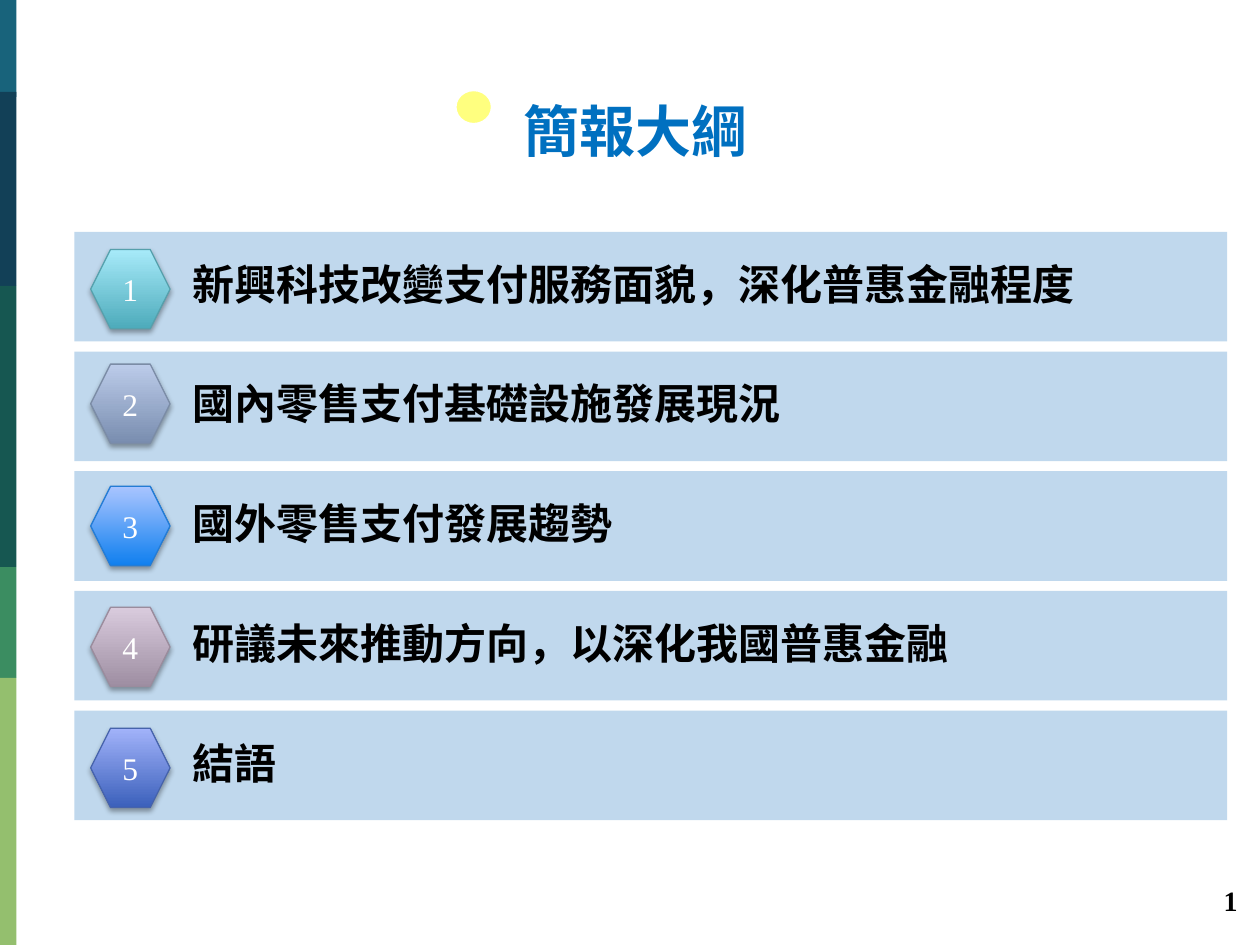
from dataclasses import dataclass

from lxml.etree import SubElement
from pptx import Presentation
from pptx.dml.color import RGBColor
from pptx.enum.shapes import MSO_SHAPE
from pptx.enum.text import MSO_ANCHOR, PP_ALIGN
from pptx.oxml.ns import qn
from pptx.util import Pt

PX = 9144  # EMU per px, 100 px to the inch


@dataclass(frozen=True)
class Theme:
    heading_font: str = "Noto Sans CJK SC"
    number_font: str = "Times New Roman"
    title_size: int = 32
    topic_size: int = 24
    badge_size: int = 18
    page_size: int = 16
    title: str = "0070C0"
    text: str = "000000"
    white: str = "FFFFFF"
    bar: str = "C0D8ED"
    dot: str = "FFFF00"
    shadow: str = "000000"


STRIPES = [  # top, height, colour
    (0, 77, "18637B"),
    (73, 154, "124057"),
    (227, 223, "165751"),
    (450, 88, "3B8D61"),
    (538, 212, "94BF6E"),
]
TOPICS = [  # wording, badge top, badge bottom colour, top colour, outline
    ("新興科技改變支付服務面貌，深化普惠金融程度", 198, "4DABBB", "A7EAF9", "56A0AC"),
    ("國內零售支付基礎設施發展現況", 289, "798DAF", "BCCCEA", "7B8CA6"),
    ("國外零售支付發展趨勢", 386, "0F7FEF", "AAC5FF", "247CD5"),
    ("研議未來推動方向，以深化我國普惠金融", 482, "9E8EA2", "D9CBDD", "9A8C9D"),
    ("結語", 578, "3B60BB", "A2B3FA", "4663AB"),
]
BAR_TOP, BAR_HEIGHT, BAR_STEP = 184, 87, 95


class SlideBuilder:
    def __init__(self, slide, theme):
        self.slide = slide
        self.theme = theme

    def shape(self, kind, box, fill=None, line=None, line_width=1):
        shape = self.slide.shapes.add_shape(kind, *(v * PX for v in box))
        shape.shadow.inherit = False
        if fill:
            shape.fill.solid()
            shape.fill.fore_color.rgb = RGBColor.from_string(fill)
        if line:
            shape.line.color.rgb = RGBColor.from_string(line)
            shape.line.width = Pt(line_width)
        else:
            shape.line.fill.background()
        return shape

    def set_text(self, frame, text, font, size, color, bold=True,
                 align=PP_ALIGN.LEFT, anchor=MSO_ANCHOR.MIDDLE, insets=(10, 5, 10, 5)):
        frame.text = text
        frame.word_wrap = True
        frame.vertical_anchor = anchor
        (frame.margin_left, frame.margin_top,
         frame.margin_right, frame.margin_bottom) = (v * PX for v in insets)
        paragraph = frame.paragraphs[0]
        paragraph.alignment = align
        run_font = paragraph.runs[0].font
        run_font.name = font
        run_font.size = Pt(size)
        run_font.bold = bold
        run_font.color.rgb = RGBColor.from_string(color)
        properties = paragraph.runs[0]._r.get_or_add_rPr()
        SubElement(properties, qn("a:ea"), typeface=font)
        return paragraph

    def text_box(self, box, text, font, size, color, **layout):
        text_box = self.slide.shapes.add_textbox(*(v * PX for v in box))
        self.set_text(text_box.text_frame, text, font, size, color, **layout)

    def dot(self, box):
        """Half-transparent circle with a white outline."""
        dot = self.shape(MSO_SHAPE.OVAL, box, self.theme.dot, self.theme.white, 2)
        color = dot._element.spPr.find(qn("a:solidFill")).find(qn("a:srgbClr"))
        SubElement(color, qn("a:alpha"), val="50000")

    def topic_bar(self, top, text):
        bar = self.shape(MSO_SHAPE.RECTANGLE, (59, top, 915, BAR_HEIGHT), self.theme.bar)
        paragraph = self.set_text(bar.text_frame, text, self.theme.heading_font,
                                  self.theme.topic_size, self.theme.text,
                                  insets=(54, 8, 8, 8))
        paragraph.line_spacing = 0.9
        properties = paragraph._p.get_or_add_pPr()
        properties.set("indent", str(40 * PX))
        space_after = SubElement(properties, qn("a:spcAft"))
        SubElement(space_after, qn("a:spcPct"), val="35000")

    def badge(self, top, number, bottom_color, top_color, outline):
        """Numbered hexagon with a vertical gradient and a soft shadow."""
        badge = self.shape(MSO_SHAPE.HEXAGON, (72, top, 63, 63),
                           line=outline, line_width=0.75)
        badge.fill.gradient()
        badge.fill.gradient_angle = 90
        for stop, color in zip(badge.fill.gradient_stops, (bottom_color, top_color)):
            stop.color.rgb = RGBColor.from_string(color)
        effects = badge._element.spPr.find(qn("a:effectLst"))
        shadow = SubElement(effects, qn("a:outerShdw"), blurRad=str(Pt(3.1)),
                            dist=str(Pt(1.8)), dir="5400000", rotWithShape="0")
        color = SubElement(shadow, qn("a:srgbClr"), val=self.theme.shadow)
        SubElement(color, qn("a:alpha"), val="35000")
        self.set_text(badge.text_frame, str(number), self.theme.number_font,
                      self.theme.badge_size, self.theme.white, bold=False,
                      align=PP_ALIGN.CENTER)


def main():
    presentation = Presentation()
    presentation.slide_width = 1000 * PX
    presentation.slide_height = 750 * PX
    theme = Theme()
    builder = SlideBuilder(
        presentation.slides.add_slide(presentation.slide_layouts[6]), theme)

    for top, height, color in STRIPES:
        builder.shape(MSO_SHAPE.RECTANGLE, (0, top, 13, height), color)

    builder.text_box((406, 48, 469, 111), "簡報大綱", theme.heading_font,
                     theme.title_size, theme.title, insets=(10, 10, 10, 10))
    builder.dot((361, 71, 30, 28))

    for index, (topic, badge_top, *badge_colors) in enumerate(TOPICS):
        builder.topic_bar(BAR_TOP + index * BAR_STEP, topic)
        builder.badge(badge_top, index + 1, *badge_colors)

    builder.text_box((859, 696, 133, 53), "1", theme.number_font, theme.page_size,
                     theme.text, align=PP_ALIGN.RIGHT, anchor=MSO_ANCHOR.TOP)
    presentation.save("out.pptx")


if __name__ == "__main__":
    main()
